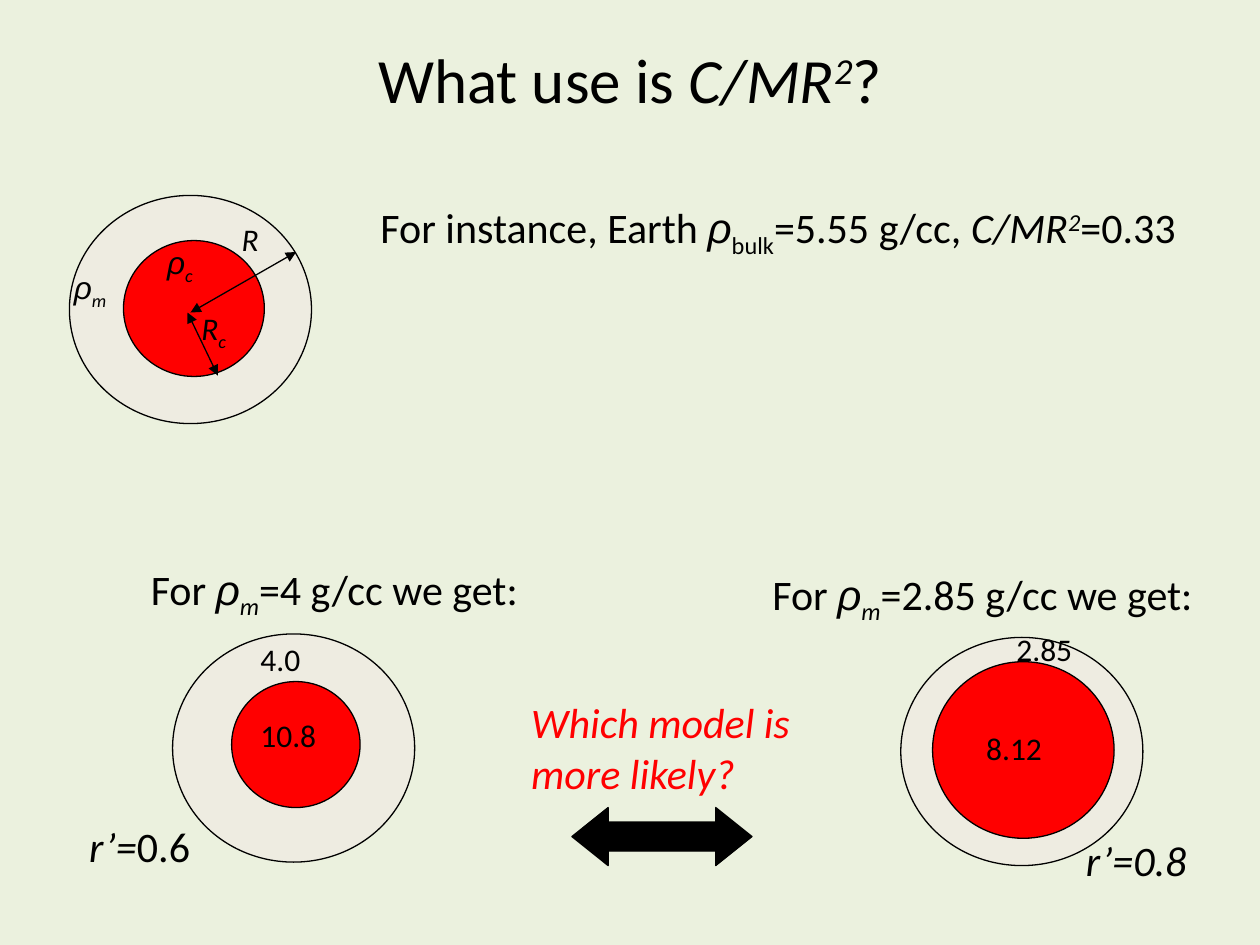
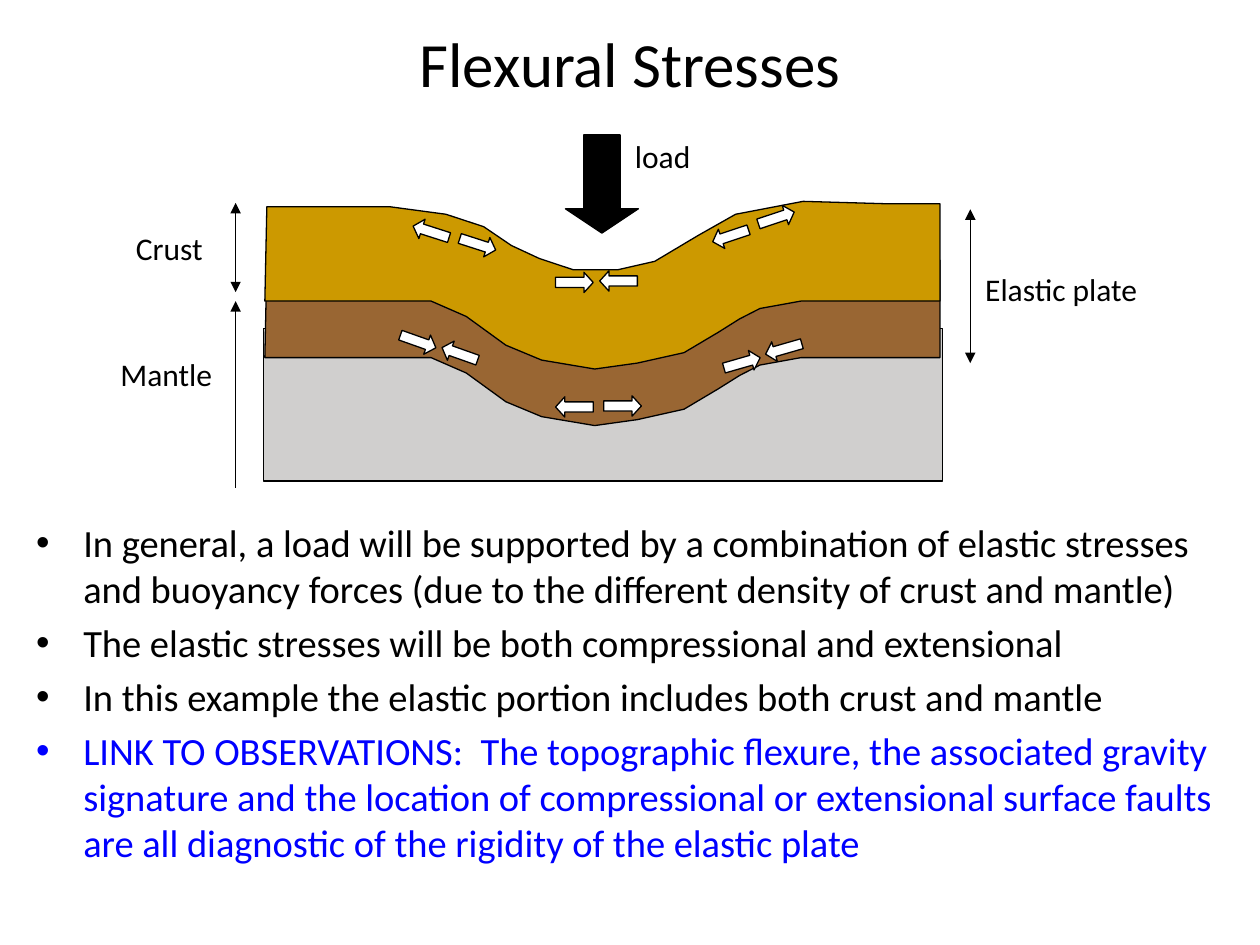
from dataclasses import dataclass
from typing import NamedTuple

import lxml.etree
import pptx
import pptx.dml.color
import pptx.enum.shapes
import pptx.enum.text
import pptx.oxml.ns
import pptx.shapes.autoshape
import pptx.shapes.base
import pptx.slide
import pptx.text.text
import pptx.util

Cm = pptx.util.Cm
Pt = pptx.util.Pt
Kind = pptx.enum.shapes.MSO_SHAPE
qn = pptx.oxml.ns.qn


@dataclass(frozen=True)
class Theme:
    font: str = "Calibri"
    greek: str = "Arial"
    head: float = 36
    large: float = 24
    body: float = 22
    small: float = 18
    line: float = 0.75
    black: str = "000000"
    white: str = "FFFFFF"
    red: str = "FF0000"
    blue: str = "0000FF"
    sage: str = "EBF1DE"
    shell: str = "EEECE1"
    crust: str = "CC9900"
    mantle: str = "996633"
    deep: str = "D0CFCE"


THEME = Theme()


class Run(NamedTuple):
    text: str
    italic: bool = False
    base: int = 0
    greek: bool = False


class Box(NamedTuple):
    left: float
    top: float
    width: float
    height: float


class Label(NamedTuple):
    box: Box
    lines: list[list[Run]]
    size: float = THEME.small
    color: str = THEME.black


class Planet(NamedTuple):
    left: float
    top: float
    core: Box


class Ray(NamedTuple):
    start: tuple[float, float]
    end: tuple[float, float]
    ends: tuple[str, ...] = ("headEnd", "tailEnd")


class Pair(NamedTuple):
    turn: float
    right: tuple[float, float]
    left: tuple[float, float]


def rgb(color: str) -> pptx.dml.color.RGBColor:
    return pptx.dml.color.RGBColor.from_string(color)


def place(box: Box) -> list[int]:
    return [Cm(side) for side in box]


def plain(text: str) -> list[Run]:
    return [Run(text)]


def rho(sub: str, italic: bool = True) -> list[Run]:
    return [Run("ρ", True, greek=True), Run(sub, italic, -25)]


def ratio() -> list[Run]:
    return [Run("C/MR", True), Run("2", True, 30)]


def write(para: pptx.text.text._Paragraph, runs: list[Run], size: float, color: str) -> None:
    slant = all(run.italic for run in runs)
    para.font.name = THEME.font
    para.font.size = Pt(size)
    para.font.color.rgb = rgb(color)
    if slant:
        para.font.italic = True
    for run in runs:
        part = para.add_run()
        part.text = run.text
        if run.italic and not slant:
            part.font.italic = True
        if run.greek:
            part.font.name = THEME.greek
        if run.base:
            part._r.get_or_add_rPr().set("baseline", str(run.base * 1000))


def title(slide: pptx.slide.Slide, top: float, runs: list[Run]) -> None:
    frame = slide.shapes.add_textbox(*place(Box(1.27, top, 22.86, 3.17))).text_frame
    frame.word_wrap = True
    frame.vertical_anchor = pptx.enum.text.MSO_ANCHOR.MIDDLE
    para = frame.paragraphs[0]
    para.alignment = pptx.enum.text.PP_ALIGN.CENTER
    write(para, runs, THEME.head, THEME.black)


def label(slide: pptx.slide.Slide, item: Label) -> None:
    frame = slide.shapes.add_textbox(*place(item.box)).text_frame
    frame.word_wrap = False
    frame.auto_size = pptx.enum.text.MSO_AUTO_SIZE.SHAPE_TO_FIT_TEXT
    for i, runs in enumerate(item.lines):
        para = frame.add_paragraph() if i else frame.paragraphs[0]
        write(para, runs, item.size, item.color)


def points(slide: pptx.slide.Slide, box: Box, items: list[tuple[str, str]]) -> None:
    frame = slide.shapes.add_textbox(*place(box)).text_frame
    frame.word_wrap = True
    for i, (text, color) in enumerate(items):
        para = frame.add_paragraph() if i else frame.paragraphs[0]
        para.space_before = Pt(THEME.body * 0.2)
        props = para._p.get_or_add_pPr()
        props.set("marL", str(Cm(0.95)))
        props.set("indent", str(Cm(-0.95)))
        font = lxml.etree.SubElement(props, qn("a:buFont"))
        font.set("typeface", THEME.greek)
        lxml.etree.SubElement(props, qn("a:buChar")).set("char", "•")
        write(para, plain(text), THEME.body, color)


def paint(shape: pptx.shapes.autoshape.Shape, fill: str) -> None:
    shape.shadow.inherit = False
    shape.fill.solid()
    shape.fill.fore_color.rgb = rgb(fill)
    shape.line.color.rgb = rgb(THEME.black)
    shape.line.width = Pt(THEME.line)


def draw(slide: pptx.slide.Slide, kind: Kind, box: Box, fill: str,
         adjust: tuple[float, ...] = (), turn: float = 0) -> None:
    shape = slide.shapes.add_shape(kind, *place(box))
    for i, value in enumerate(adjust):
        shape.adjustments[i] = value
    shape.rotation = turn
    paint(shape, fill)


def planet(slide: pptx.slide.Slide, item: Planet) -> None:
    draw(slide, Kind.OVAL, Box(item.left, item.top, 4.88, 4.6), THEME.shell)
    draw(slide, Kind.OVAL, item.core, THEME.red)


def ray(slide: pptx.slide.Slide, item: Ray) -> None:
    line = slide.shapes.add_connector(
        pptx.enum.shapes.MSO_CONNECTOR.STRAIGHT,
        *(Cm(n) for n in item.start + item.end))
    line.line.color.rgb = rgb(THEME.black)
    line.line.width = Pt(THEME.line)
    for end in item.ends:
        lxml.etree.SubElement(line.line._get_or_add_ln(), qn(f"a:{end}")).set("type", "triangle")
    lxml.etree.SubElement(line._element.spPr, qn("a:effectLst"))


def layer(slide: pptx.slide.Slide, outline: list[tuple[float, float]], drop: float, fill: str) -> None:
    spots = [(Cm(x), Cm(y + drop)) for x, y in outline]
    form = slide.shapes.build_freeform(*spots[0])
    form.add_line_segments(spots[1:], close=True)
    paint(form.convert_to_shape(), fill)


def stress(slide: pptx.slide.Slide, pair: Pair) -> None:
    for kind, spot in ((Kind.RIGHT_ARROW, pair.right), (Kind.LEFT_ARROW, pair.left)):
        draw(slide, kind, Box(*spot, 0.76, 0.41), THEME.white, (0.5, 0.457), pair.turn)


def blank(deck: pptx.presentation.Presentation, color: str) -> pptx.slide.Slide:
    slide = deck.slides.add_slide(deck.slide_layouts[6])
    slide.background.fill.solid()
    slide.background.fill.fore_color.rgb = rgb(color)
    return slide


PLANETS = [
    Planet(1.4, 3.94, Box(2.49, 4.85, 2.84, 2.74)),
    Planet(3.48, 12.78, Box(4.67, 13.74, 2.59, 2.54)),
    Planet(18.16, 12.85, Box(18.8, 13.34, 3.66, 3.56)),
]
RADII = [Ray((3.78, 6.3), (4.39, 7.57)), Ray((3.84, 6.3), (5.97, 5.08))]
NOTES = [
    Label(Box(1.24, 5.28, 1.22, 1.1), [rho("m")]),
    Label(Box(3.12, 4.78, 1.09, 1.1), [rho("c")]),
    Label(Box(3.81, 6.1, 1.14, 1.1), [[Run("R", True), Run("c", True, -25)]]),
    Label(Box(4.62, 4.32, 0.94, 1.1), [[Run("R", True)]]),
    Label(Box(5, 14.3, 1.75, 1.1), [plain("10.8")]),
    Label(Box(5, 12.78, 1.4, 1.1), [plain("4.0")]),
    Label(Box(19.63, 14.58, 1.75, 1.1), [plain("8.12")]),
    Label(Box(20.24, 12.57, 1.75, 1.1), [plain("2.85")]),
    Label(Box(7.42, 3.94, 17.25, 1.3),
          [[Run("For instance, Earth "), *rho("bulk", False), Run("=5.55 g/cc, "),
            *ratio(), Run("=0.33")]], THEME.large),
    Label(Box(2.79, 11.23, 8.36, 1.3),
          [[Run("For "), *rho("m"), Run("=4 g/cc we get:")]], THEME.large),
    Label(Box(15.32, 11.33, 9.14, 1.3),
          [[Run("For "), *rho("m"), Run("=2.85 g/cc we get:")]], THEME.large),
    Label(Box(10.46, 13.92, 5.74, 2.29),
          [[Run("Which model is", True)], [Run("more likely?", True)]], THEME.large, THEME.red),
    Label(Box(1.55, 16.41, 2.82, 1.28), [[Run("r’=", True), Run("0.6")]], THEME.large),
    Label(Box(21.64, 16.69, 2.82, 1.28), [[Run("r’=0.8", True)]], THEME.large),
]

PLATE = [
    (5.38, 4.17), (7.87, 4.17), (8.99, 4.32), (9.75, 4.57), (10.31, 4.95),
    (10.87, 5.21), (11.56, 5.44), (12.45, 5.44), (13.2, 5.27), (14.07, 4.75),
    (14.83, 4.32), (16.19, 4.06), (17.93, 4.11), (18.95, 4.11), (18.95, 6.07),
    (16.15, 6.07), (15.32, 6.22), (14.91, 6.43), (14.48, 6.7), (13.79, 7.11),
    (12.85, 7.32), (11.99, 7.44), (10.92, 7.26), (10.2, 6.96), (9.4, 6.38),
    (8.69, 6.07), (5.34, 6.07),
]
PAIRS = [
    Pair(0, (11.2, 5.49), (12.09, 5.46)),
    Pair(0, (12.17, 7.98), (11.2, 8)),
    Pair(17.8, (9.25, 4.72), (8.31, 4.47)),
    Pair(341.6, (15.27, 4.19), (14.35, 4.55)),
    Pair(19.5, (8.05, 6.68), (8.89, 6.93)),
    Pair(344, (14.58, 7.11), (15.42, 6.83)),
]
SPANS = [
    Ray((19.56, 4.22), (19.56, 7.32)),
    Ray((4.75, 4.09), (4.75, 5.89)),
    Ray((4.75, 6.07), (4.75, 9.83), ("headEnd",)),
]
PARTS = [
    Label(Box(19.61, 5.31, 3.96, 1.1), [plain("Elastic plate")]),
    Label(Box(2.49, 4.5, 2.03, 1.1), [plain("Crust")]),
    Label(Box(2.18, 7.04, 2.51, 1.1), [plain("Mantle")]),
    Label(Box(12.55, 2.64, 1.73, 1.1), [plain("load")]),
]
FACTS = [
    ("In general, a load will be supported by a combination of elastic stresses and "
     "buoyancy forces (due to the different density of crust and mantle)", THEME.black),
    ("The elastic stresses will be both compressional and extensional", THEME.black),
    ("In this example the elastic portion includes both crust and mantle", THEME.black),
    ("LINK TO OBSERVATIONS:  The topographic flexure, the associated gravity signature "
     "and the location of compressional or extensional surface faults are all diagnostic "
     "of the rigidity of the elastic plate", THEME.blue),
]


def inertia(deck: pptx.presentation.Presentation) -> None:
    slide = blank(deck, THEME.sage)
    title(slide, 0, [Run("What use is "), *ratio(), Run("?")])
    for item in PLANETS:
        planet(slide, item)
    for item in RADII:
        ray(slide, item)
    draw(slide, Kind.LEFT_RIGHT_ARROW, Box(11.53, 16.28, 3.63, 1.17), THEME.black, (0.5, 0.624))
    for item in NOTES:
        label(slide, item)


def flexure(deck: pptx.presentation.Presentation) -> None:
    slide = blank(deck, THEME.white)
    title(slide, -0.33, plain("Flexural Stresses"))
    points(slide, Box(0.48, 10.34, 24.41, 6.65), FACTS)
    draw(slide, Kind.RECTANGLE, Box(5.31, 6.63, 13.69, 3.07), THEME.deep)
    layer(slide, PLATE, 1.14, THEME.mantle)
    layer(slide, PLATE, 0, THEME.crust)
    draw(slide, Kind.DOWN_ARROW, Box(11.4, 2.72, 1.47, 1.98), THEME.black, (0.5, 0.333))
    for pair in PAIRS:
        stress(slide, pair)
    for item in SPANS:
        ray(slide, item)
    for item in PARTS:
        label(slide, item)


def main() -> None:
    deck = pptx.Presentation()
    deck.slide_width, deck.slide_height = Cm(25.4), Cm(19.05)
    inertia(deck)
    flexure(deck)
    deck.save("out.pptx")


if __name__ == "__main__":
    main()
